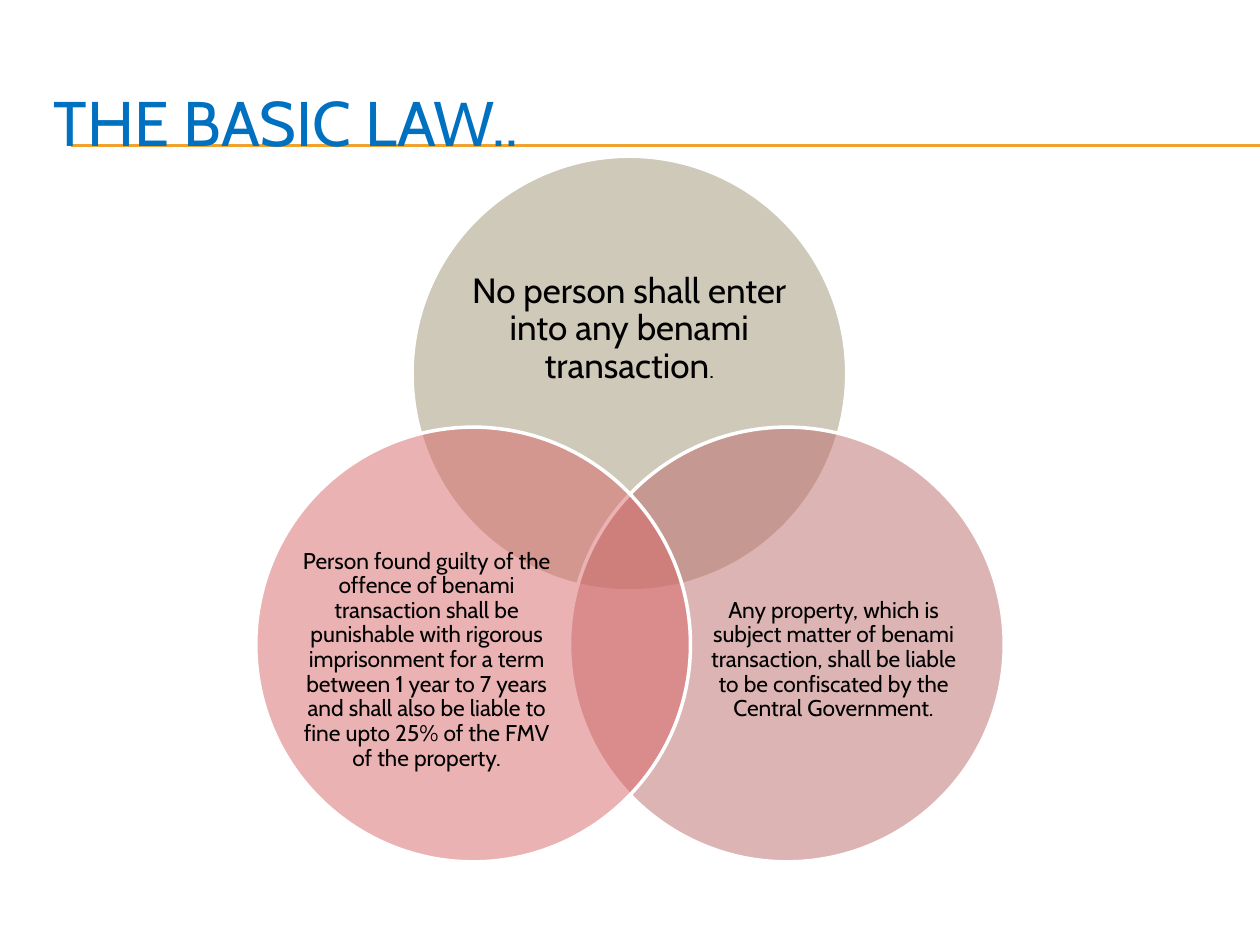
from lxml import etree
from pptx import Presentation
from pptx.dml.color import RGBColor
from pptx.enum import shapes, text
from pptx.oxml.ns import qn
from pptx.util import Inches, Pt

FONT = "Cabin"
DIAMETER = 3.45
# left, top, fill of each circle; box and runs (wording, size) of its label
CIRCLES = [
    (3.27, 1.24, "A19574", (3.73, 1.84, 2.53, 1.55),
     [("No person shall enter into any benami transaction", 20), (".", 13)]),
    (4.52, 3.39, "BC6A6A", (5.58, 4.29, 2.07, 1.9),
     [("Any property, which is subject matter of benami transaction, "
       "shall be liable to be confiscated by the Central Government.", 13)]),
    (2.03, 3.39, "D86668", (2.35, 4.29, 2.07, 1.9),
     [("Person found guilty of the offence of benami transaction shall be "
       "punishable with rigorous imprisonment for a term between 1 year to "
       "7 years and shall also be liable to fine upto 25% of the FMV of the "
       "property.", 13)]),
]


def color(value):
    return RGBColor.from_string(value)


def add_rule(page, y):
    rule = page.shapes.add_connector(
        shapes.MSO_CONNECTOR.STRAIGHT,
        Inches(0.56), Inches(y), Inches(10), Inches(y))
    rule.line.color.rgb = color("F0A22E")
    rule.line.width = Pt(0.75)
    etree.SubElement(rule._element.spPr, qn("a:effectLst"))


def add_circle(page, left, top, fill):
    """Add a half-transparent circle with a white outline."""
    circle = page.shapes.add_shape(
        shapes.MSO_SHAPE.OVAL,
        *map(Inches, (left, top, DIAMETER, DIAMETER)))
    circle.shadow.inherit = False
    circle.fill.solid()
    circle.fill.fore_color.rgb = color(fill)
    tone = circle._element.spPr.find(qn("a:solidFill"))[0]
    etree.SubElement(tone, qn("a:alpha"), val="50000")
    circle.line.color.rgb = color("FFFFFF")
    circle.line.width = Pt(2)


def add_text(page, box, runs, ink, margins, **paragraph_format):
    """Add a wrapped, vertically centred paragraph; margins are (side, top)."""
    frame = page.shapes.add_textbox(*map(Inches, box)).text_frame
    side, top = map(Inches, margins)
    frame_format = {
        "word_wrap": True, "vertical_anchor": text.MSO_ANCHOR.MIDDLE,
        "margin_left": side, "margin_right": side,
        "margin_top": top, "margin_bottom": top,
    }
    for name, value in frame_format.items():
        setattr(frame, name, value)
    para = frame.paragraphs[0]
    for name, value in paragraph_format.items():
        setattr(para, name, value)
    for wording, size in runs:
        span = para.add_run()
        span.text = wording
        span.font.name = FONT
        span.font.size = Pt(size)
        span.font.color.rgb = color(ink)


def main():
    deck = Presentation()
    deck.slide_width, deck.slide_height = Inches(10), Inches(7.5)
    page = deck.slides.add_slide(deck.slide_layouts[6])
    for y in (1.15, 1.16):
        add_rule(page, y)
    add_text(page, (0.33, 0.5, 9.5, 0.92), [("THE BASIC LAW..", 36)],
             "0070C0", (0.1, 0.05))
    for left, top, fill, box, runs in CIRCLES:
        add_circle(page, left, top, fill)
        add_text(page, box, runs, "000000", (0, 0),
                 alignment=text.PP_ALIGN.CENTER, line_spacing=0.9)
    deck.save("out.pptx")


if __name__ == "__main__":
    main()
